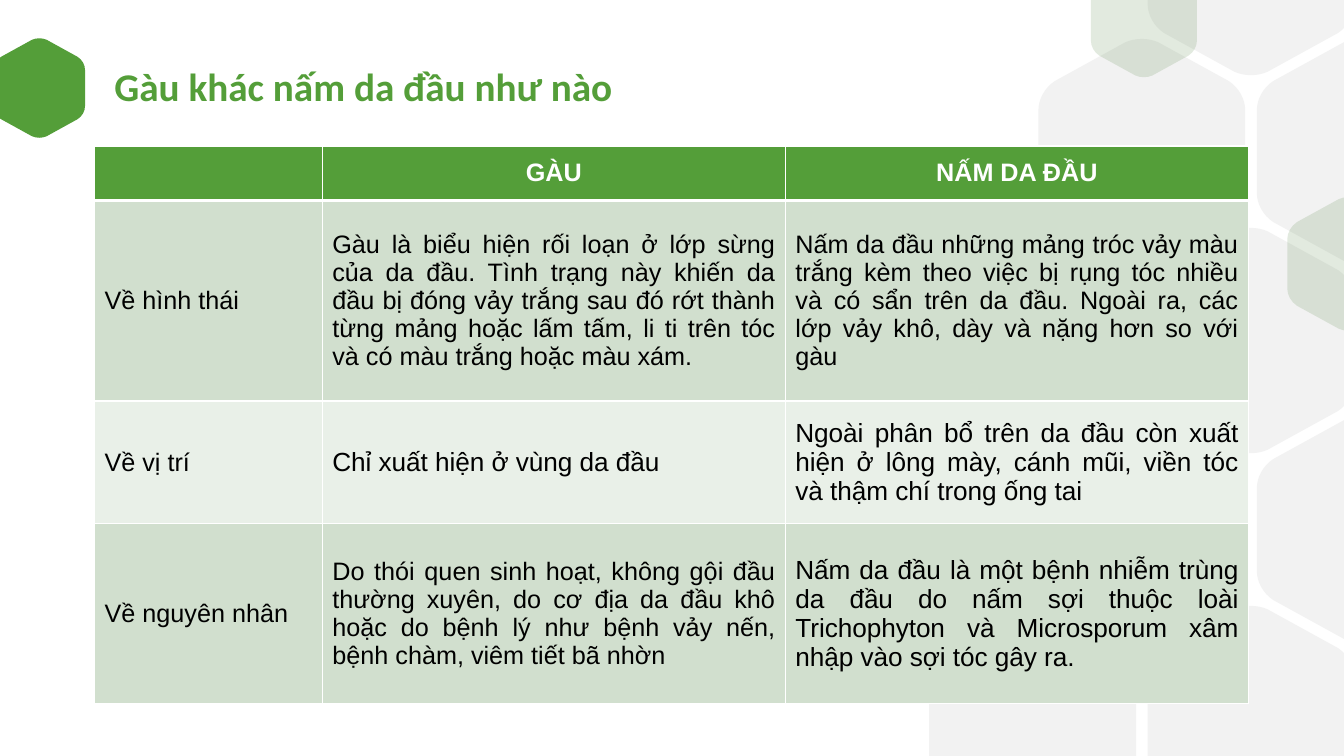
from lxml import etree
from pptx import Presentation
from pptx.dml.color import RGBColor
from pptx.enum.text import MSO_ANCHOR, MSO_AUTO_SIZE, PP_ALIGN
from pptx.oxml.ns import qn
from pptx.util import Pt

PX = 9525
PAGE_WIDTH, PAGE_HEIGHT = 1280, 720
MIDDLE = MSO_ANCHOR.MIDDLE
NO_FIT = MSO_AUTO_SIZE.NONE
LEFT, CENTER, JUSTIFY = PP_ALIGN.LEFT, PP_ALIGN.CENTER, PP_ALIGN.JUSTIFY

GREEN = RGBColor(0x54, 0x9E, 0x39)
DARK_GREEN = RGBColor(0x3F, 0x76, 0x2B)
PALE_GREEN = RGBColor(0xD1, 0xDF, 0xCE)
FAINT_GREEN = RGBColor(0xE9, 0xF0, 0xE8)
GRAY = RGBColor(0xF2, 0xF2, 0xF2)
WHITE = RGBColor(0xFF, 0xFF, 0xFF)
BLACK = RGBColor(0x00, 0x00, 0x00)

HEXAGON_RATIO = 1.1
SIDE_CORNER = [(1, 0.32), (1, 0.27), (0.97, 0.22), (0.92, 0.19)]
TOP_CORNER = [(0.58, 0.02), (0.53, 0), (0.47, 0), (0.42, 0.02)]

GRID_LEFT, GRID_TOP, COLUMN_STEP, ROW_STEP = 885, 36, 104, 180
GRAY_HEXAGONS = [(0, 3), (2, 3), (3, 0), (2, -1), (2, 1), (1, 0), (3, 2)]
GRAY_WIDTH = 197
GREEN_HEXAGON = (-6, 36, 87)
CLEAR_HEXAGONS = [(1226, 187, 117), (1039, -37, 101)]
CLEAR_OPACITY = 15

TITLE = "Gàu khác nấm da đầu như nào"
TITLE_BOX = (109, 57, 841, 56)
TABLE_LEFT, TABLE_TOP = 90, 139
COLUMN_WIDTHS = [217, 441, 441]
ROW_HEIGHTS = [52, 191, 117, 171]
ROW_FILLS = [GREEN, PALE_GREEN, FAINT_GREEN, PALE_GREEN]
NORMAL_SIZE, LARGE_SIZE = 18, 18.67
LARGE_CELLS = {(2, 1), (2, 2), (3, 2)}
ROWS = [
    ["", "GÀU", "NẤM DA ĐẦU"],
    [
        "Về hình thái",
        "Gàu là biểu hiện rối loạn ở lớp sừng của da đầu. Tình trạng này khiến da đầu "
        "bị đóng vảy trắng sau đó rớt thành từng mảng hoặc lấm tấm, li ti trên tóc "
        "và có màu trắng hoặc màu xám.",
        "Nấm da đầu những mảng tróc vảy màu trắng kèm theo việc bị rụng tóc nhiều và có "
        "sẩn trên da đầu. Ngoài ra, các lớp vảy khô, dày và nặng hơn so với gàu",
    ],
    [
        "Về vị trí",
        "Chỉ xuất hiện ở vùng da đầu",
        "Ngoài phân bổ trên da đầu còn xuất hiện ở lông mày, cánh mũi, viền tóc "
        "và thậm chí trong ống tai",
    ],
    [
        "Về nguyên nhân",
        "Do thói quen sinh hoạt, không gội đầu thường xuyên, do cơ địa da đầu khô hoặc "
        "do bệnh lý như bệnh vảy nến, bệnh chàm, viêm tiết bã nhờn",
        "Nấm da đầu là một bệnh nhiễm trùng da đầu do nấm sợi thuộc loài Trichophyton "
        "và Microsporum xâm nhập vào sợi tóc gây ra.",
    ],
]


def set_all(target, values):
    for name, value in values.items():
        setattr(target, name, value)


def hexagon_corners():
    mirrored = [(1 - x, y) for x, y in reversed(SIDE_CORNER)]
    upper = [SIDE_CORNER, TOP_CORNER, mirrored]
    return upper + [[(1 - x, 1 - y) for x, y in corner] for corner in upper]


def hexagon_points(left, top, width):
    points, curve_starts = [], []
    for corner in hexagon_corners():
        placed = [(left + x * width, top + y * width * HEXAGON_RATIO) for x, y in corner]
        if any(0 < y < PAGE_HEIGHT for x, y in placed):
            curve_starts.append(len(points))
            points += placed
        else:
            edge = 0 if top < 0 else PAGE_HEIGHT
            points += [(left + x * width, edge) for x, y in corner if x in (0, 1)][:1]
    return [(round(x * PX), round(y * PX)) for x, y in points], curve_starts


def bend_corners(shape, curve_starts):
    steps = list(shape._element.find(".//" + qn("a:path")))
    for start in curve_starts:
        first, *others = steps[start + 1:start + 4]
        first.tag = qn("a:cubicBezTo")
        for step in others:
            first.append(step[0])
            step.getparent().remove(step)


def add_hexagon(page, left, top, width, color, opacity=100):
    points, curve_starts = hexagon_points(left, top, width)
    builder = page.shapes.build_freeform(*points[0])
    builder.add_line_segments(points[1:], close=True)
    hexagon = builder.convert_to_shape()
    replace_curves = [start for start in curve_starts if start + 3 < len(points)]
    bend_corners(hexagon, replace_curves)
    hexagon.shadow.inherit = False
    hexagon.line.fill.background()
    hexagon.fill.solid()
    hexagon.fill.fore_color.rgb = color
    if opacity < 100:
        tint = hexagon._element.spPr.find(qn("a:solidFill"))[0]
        etree.SubElement(tint, qn("a:alpha"), val=str(opacity * 1000))


def write_text(frame, text, align, size, font, color, bold):
    para = frame.paragraphs[0]
    para.alignment = align
    span = para.add_run()
    span.text = text
    set_all(span.font, {"size": Pt(size), "name": font, "bold": bold})
    span.font.color.rgb = color
    return para


def add_title(page):
    box = page.shapes.title
    names = ("left", "top", "width", "height")
    set_all(box, {name: value * PX for name, value in zip(names, TITLE_BOX)})
    frame = box.text_frame
    set_all(frame, {
        "margin_left": 0, "margin_top": 0, "margin_right": 0, "margin_bottom": 0,
        "vertical_anchor": MIDDLE, "word_wrap": True, "auto_size": NO_FIT,
    })
    para = write_text(frame, TITLE, LEFT, 28, "Calibri", GREEN, True)
    para.line_spacing = 0.9


def add_borders(cell, widths):
    properties = cell._tc.get_or_add_tcPr()
    for place, (side, width) in enumerate(widths.items()):
        line = etree.Element(qn("a:ln" + side), w=str(Pt(width)))
        fill = etree.SubElement(line, qn("a:solidFill"))
        etree.SubElement(fill, qn("a:srgbClr"), val=str(WHITE))
        properties.insert(place, line)


def format_cell(cell, row, column):
    cell.fill.solid()
    cell.fill.fore_color.rgb = ROW_FILLS[row]
    cell.vertical_anchor = MIDDLE
    header = row == 0
    add_borders(cell, {"L": 1, "R": 1, "T": 3 if row == 1 else 1, "B": 3 if header else 1})
    text = ROWS[row][column]
    if text:
        align = CENTER if header else JUSTIFY if column else LEFT
        size = LARGE_SIZE if (row, column) in LARGE_CELLS else NORMAL_SIZE
        write_text(cell.text_frame, text, align, size, "Arial", WHITE if header else BLACK, header)


def add_comparison(page):
    table = page.shapes.add_table(
        len(ROWS), len(COLUMN_WIDTHS), TABLE_LEFT * PX, TABLE_TOP * PX,
        sum(COLUMN_WIDTHS) * PX, sum(ROW_HEIGHTS) * PX,
    ).table
    for column, width in zip(table.columns, COLUMN_WIDTHS):
        column.width = width * PX
    for row, height in enumerate(ROW_HEIGHTS):
        table.rows[row].height = height * PX
        for column in range(len(COLUMN_WIDTHS)):
            format_cell(table.cell(row, column), row, column)


def main():
    deck = Presentation()
    set_all(deck, {"slide_width": PAGE_WIDTH * PX, "slide_height": PAGE_HEIGHT * PX})
    page = deck.slides.add_slide(deck.slide_layouts[5])
    for column, row in GRAY_HEXAGONS:
        left, top = GRID_LEFT + column * COLUMN_STEP, GRID_TOP + row * ROW_STEP
        add_hexagon(page, left, top, GRAY_WIDTH, GRAY)
    add_hexagon(page, *GREEN_HEXAGON, GREEN)
    for place in CLEAR_HEXAGONS:
        add_hexagon(page, *place, DARK_GREEN, CLEAR_OPACITY)
    add_title(page)
    add_comparison(page)
    deck.save("out.pptx")


if __name__ == "__main__":
    main()
